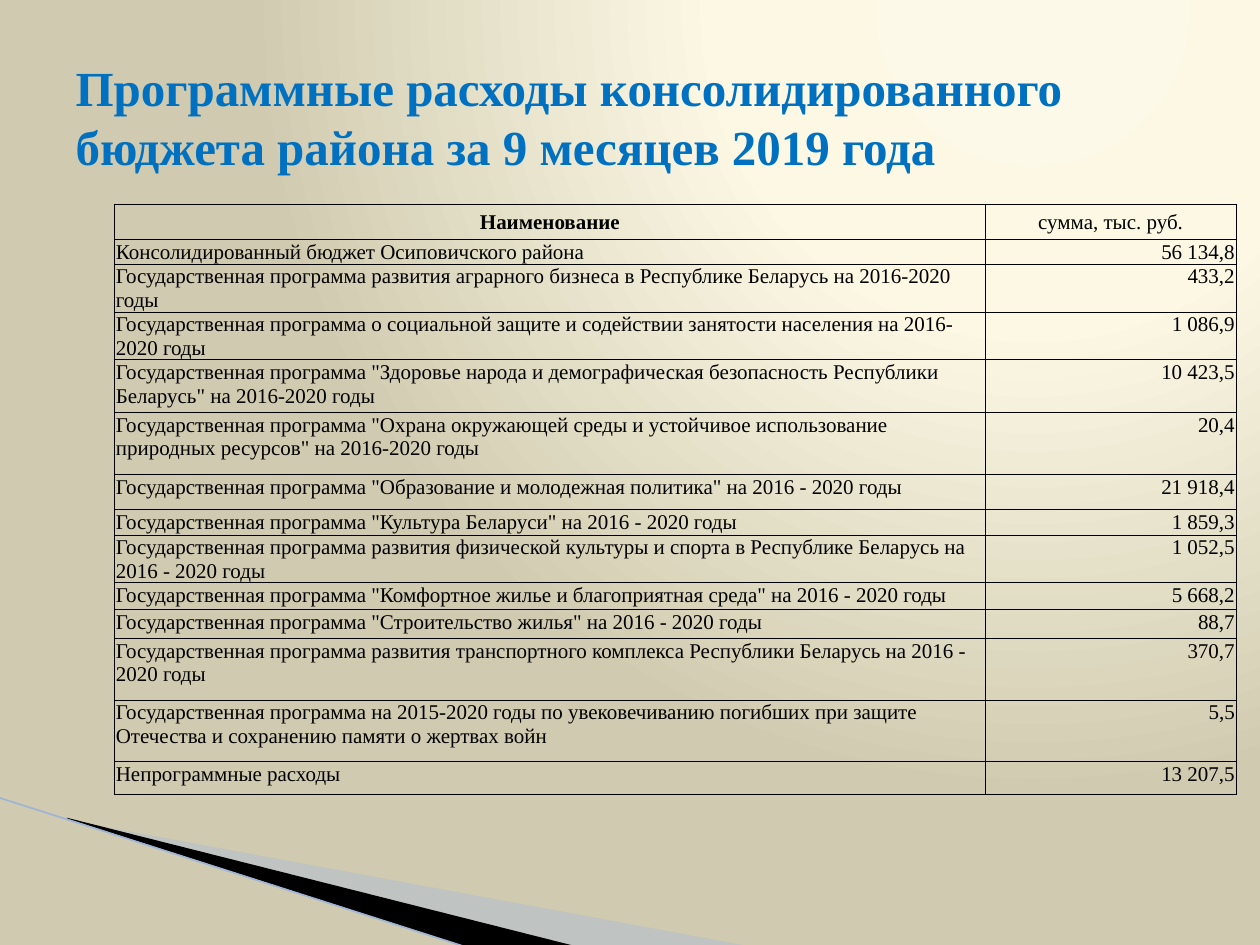
from dataclasses import dataclass

from lxml.etree import SubElement
from pptx import Presentation
from pptx.dml.color import RGBColor
from pptx.enum.shapes import MSO_CONNECTOR
from pptx.enum.text import MSO_ANCHOR, PP_ALIGN
from pptx.oxml import parse_xml
from pptx.oxml.ns import nsdecls, qn
from pptx.util import Inches, Pt


@dataclass(frozen=True)
class Theme:
    """Colours and type sizes of the slide."""
    font: str = "Times New Roman"
    title_size: float = 28
    table_size: float = 12
    title: str = "0070C0"
    ink: str = "000000"
    wedge: str = "A7B9DB"
    wedge_alpha: int = 40
    edge: str = "9EB3D6"
    edge_width: float = 0.95
    border_width: float = 0.5
    glow: tuple = ((0, "FDF9E8"), (40, "FCF8E4"), (100, "D0CBB0"))


THEME = Theme()
TITLE = "Программные расходы консолидированного бюджета района за 9 месяцев 2019 года"
HEADER = ("Наименование", "сумма, тыс. руб.", 0.28)
PROGRAMMES = [
    ("Консолидированный бюджет Осиповичского района", "56 134,8", 0.19),
    ("Государственная программа развития аграрного бизнеса в Республике Беларусь "
     "на 2016-2020 годы", "433,2", 0.38),
    ("Государственная программа о социальной защите и содействии занятости населения "
     "на 2016-2020 годы", "1 086,9", 0.36),
    ('Государственная программа "Здоровье народа и демографическая безопасность '
     'Республики Беларусь" на 2016-2020 годы', "10 423,5", 0.42),
    ('Государственная программа "Охрана окружающей среды и устойчивое использование '
     'природных ресурсов" на 2016-2020 годы', "20,4", 0.49),
    ('Государственная программа "Образование и молодежная политика" на 2016 - 2020 годы',
     "21 918,4", 0.28),
    ('Государственная программа "Культура Беларуси" на 2016 - 2020 годы', "1 859,3", 0.2),
    ("Государственная программа развития физической культуры и спорта в Республике Беларусь "
     "на 2016 - 2020 годы", "1 052,5", 0.38),
    ('Государственная программа "Комфортное жилье и благоприятная среда" на 2016 - 2020 годы',
     "5 668,2", 0.21),
    ('Государственная программа "Строительство жилья" на 2016 - 2020 годы', "88,7", 0.23),
    ("Государственная программа развития транспортного комплекса Республики Беларусь "
     "на 2016 - 2020 годы", "370,7", 0.49),
    ("Государственная программа на 2015-2020 годы по увековечиванию погибших при защите "
     "Отечества и сохранению памяти о жертвах войн", "5,5", 0.49),
    ("Непрограммные расходы", "13 207,5", 0.26),
]


def add_text(paragraph, text, size, color, bold, align):
    """Add one styled run to a paragraph."""
    paragraph.alignment = align
    run = paragraph.add_run()
    run.text = text
    run.font.name = THEME.font
    run.font.size = Pt(size)
    run.font.bold = bold
    run.font.color.rgb = RGBColor.from_string(color)


def paint_background(slide):
    """Fill the slide with a round glow from the upper right."""
    stops = "".join(f'<a:gs pos="{pos * 1000}"><a:srgbClr val="{color}"/></a:gs>'
                    for pos, color in THEME.glow)
    background = parse_xml(
        f'<p:bg {nsdecls("p", "a")}><p:bgPr><a:gradFill rotWithShape="1">'
        f'<a:gsLst>{stops}</a:gsLst><a:path path="circle">'
        '<a:fillToRect l="65000" t="0" r="0" b="98000"/></a:path></a:gradFill>'
        '<a:effectLst/></p:bgPr></p:bg>')
    slide.element.cSld.insert(0, background)


def add_wedge(slide, left, top, points, color, alpha=None):
    """Draw a filled wedge from points relative to its left top corner."""
    corners = [(Inches(left + x), Inches(top + y)) for x, y in points]
    builder = slide.shapes.build_freeform(*corners[0])
    builder.add_line_segments(corners[1:], close=True)
    wedge = builder.convert_to_shape()
    wedge.shadow.inherit = False
    wedge.line.fill.background()
    wedge.fill.solid()
    wedge.fill.fore_color.rgb = RGBColor.from_string(color)
    if alpha is not None:
        tint = wedge.element.spPr.find(".//" + qn("a:srgbClr"))
        SubElement(tint, qn("a:alpha"), val=str(alpha * 1000))


def add_corner(slide, left, top, width, height):
    """Place the wedges and the slanted edge in the lower left corner."""
    add_wedge(slide, left + 0.56, top + 0.17,
              [(0, 0.01), (5.4, 1.01), (4.01, 1.01), (0, 0)],
              THEME.wedge, THEME.wedge_alpha)
    add_wedge(slide, left + 0.54, top + 0.16,
              [(0, 0), (4.04, 1.02), (3.19, 1.03), (0.01, 0.01)], THEME.ink)
    edge = slide.shapes.add_connector(
        MSO_CONNECTOR.STRAIGHT, Inches(left), Inches(top),
        Inches(left + width), Inches(top + height))
    edge.line.color.rgb = RGBColor.from_string(THEME.edge)
    edge.line.width = Pt(THEME.edge_width)
    SubElement(edge.element.spPr, qn("a:effectLst"))


def add_title(slide, left, top, width, height):
    """Fill and place the title placeholder."""
    title = slide.shapes.title
    title.left, title.top = Inches(left), Inches(top)
    title.width, title.height = Inches(width), Inches(height)
    frame = title.text_frame
    frame.word_wrap = True
    frame.vertical_anchor = MSO_ANCHOR.MIDDLE
    add_text(frame.paragraphs[0], TITLE, THEME.title_size, THEME.title, True, PP_ALIGN.LEFT)


def style_cell(cell, anchor):
    """Give a cell thin borders, no fill and tight margins."""
    cell.margin_left = cell.margin_top = cell.margin_right = Inches(0.01)
    cell.margin_bottom = 0
    cell.vertical_anchor = anchor
    properties = cell._tc.get_or_add_tcPr()
    for side in ("lnL", "lnR", "lnT", "lnB"):
        border = SubElement(properties, qn(f"a:{side}"), w=str(Pt(THEME.border_width)))
        fill = SubElement(border, qn("a:solidFill"))
        SubElement(fill, qn("a:srgbClr"), val=THEME.ink)
    cell.fill.background()


def add_expenses(slide, left, top, width, height):
    """Place the table of programme expenses."""
    rows = [HEADER, *PROGRAMMES]
    table = slide.shapes.add_table(len(rows), 2, Inches(left), Inches(top),
                                   Inches(width), Inches(height)).table
    table.first_row = table.horz_banding = False
    amount_width = 1.99
    table.columns[0].width = Inches(width - amount_width)
    table.columns[1].width = Inches(amount_width)
    for index, (name, amount, row_height) in enumerate(rows):
        table.rows[index].height = Inches(row_height)
        is_header = index == 0
        anchor = MSO_ANCHOR.MIDDLE if is_header else MSO_ANCHOR.TOP
        for column, (text, align) in enumerate(
                ((name, PP_ALIGN.LEFT), (amount, PP_ALIGN.RIGHT))):
            cell = table.cell(index, column)
            style_cell(cell, anchor)
            add_text(cell.text_frame.paragraphs[0], text, THEME.table_size, THEME.ink,
                     is_header and column == 0, PP_ALIGN.CENTER if is_header else align)


def main():
    """Build and save the slide."""
    deck = Presentation()
    deck.slide_width, deck.slide_height = Inches(10), Inches(7.5)
    slide = deck.slides.add_slide(deck.slide_layouts[5])
    paint_background(slide)
    add_corner(slide, -0.01, 6.33, 3.72, 1.19)
    add_expenses(slide, 0.91, 1.62, 8.9, 4.8)
    add_title(slide, 0.5, 0.3, 9, 1.25)
    deck.save("out.pptx")


if __name__ == "__main__":
    main()
